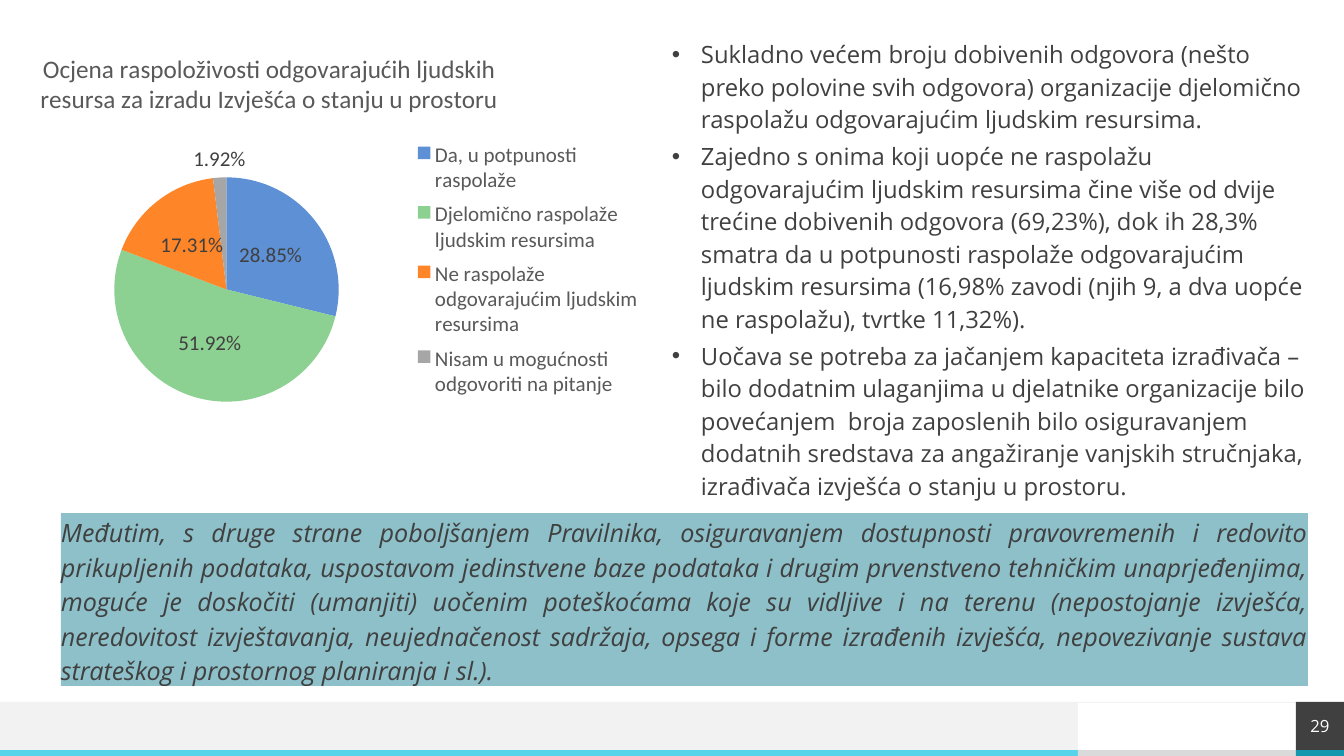
from lxml import etree
from pptx import Presentation
from pptx.chart.data import CategoryChartData
from pptx.dml.color import RGBColor
from pptx.enum.chart import XL_CHART_TYPE, XL_LEGEND_POSITION as LEGEND, XL_LABEL_POSITION as LABEL
from pptx.enum.shapes import MSO_CONNECTOR, MSO_SHAPE
from pptx.enum.text import MSO_ANCHOR, PP_ALIGN
from pptx.oxml import parse_xml
from pptx.oxml.ns import nsdecls, qn
from pptx.util import Pt

SCALE = 914400 / 100.8
DARK, GREY = "404040", "595959"

TITLE = ["Ocjena raspoloživosti odgovarajućih ljudskih", "resursa za izradu Izvješća o stanju u prostoru"]
ANSWERS = [
    ("Da, u potpunosti raspolaže", 0.2885, "5D90D5"),
    ("Djelomično raspolaže ljudskim resursima", 0.5192, "8CD092"),
    ("Ne raspolaže odgovarajućim ljudskim resursima", 0.1731, "FF8529"),
    ("Nisam u mogućnosti odgovoriti na pitanje", 0.0192, "A6A6A6"),
]
FINDINGS = [
    "Sukladno većem broju dobivenih odgovora (nešto preko polovine svih odgovora) organizacije "
    "djelomično raspolažu odgovarajućim ljudskim resursima.",
    "Zajedno s onima koji uopće ne raspolažu odgovarajućim ljudskim resursima čine više od dvije "
    "trećine dobivenih odgovora (69,23%), dok ih 28,3% smatra da u potpunosti raspolaže "
    "odgovarajućim ljudskim resursima (16,98% zavodi (njih 9, a dva uopće ne raspolažu), tvrtke 11,32%).",
    "Uočava se potreba za jačanjem kapaciteta izrađivača – bilo dodatnim ulaganjima u djelatnike "
    "organizacije bilo povećanjem  broja zaposlenih bilo osiguravanjem dodatnih sredstava za "
    "angažiranje vanjskih stručnjaka, izrađivača izvješća o stanju u prostoru.",
]
CONCLUSION = (
    "Međutim, s druge strane poboljšanjem Pravilnika, osiguravanjem dostupnosti pravovremenih i "
    "redovito prikupljenih podataka, uspostavom jedinstvene baze podataka i drugim prvenstveno "
    "tehničkim unaprjeđenjima, moguće je doskočiti (umanjiti) uočenim poteškoćama koje su vidljive "
    "i na terenu (nepostojanje izvješća, neredovitost izvještavanja, neujednačenost sadržaja, opsega "
    "i forme izrađenih izvješća, nepovezivanje sustava strateškog i prostornog planiranja i sl.)."
)


def px(length):
    return round(length * SCALE)


def rgb(value):
    return RGBColor.from_string(value)


def style(font, size, color, name="Open Sans"):
    font.size, font.name, font.bold = Pt(size), name, False
    font.color.rgb = rgb(color)


def rect(slide, x, y, w, h, color):
    box = slide.shapes.add_shape(MSO_SHAPE.RECTANGLE, px(x), px(y), px(w), px(h))
    box.shadow.inherit = False
    box.fill.solid()
    box.fill.fore_color.rgb = rgb(color)
    box.line.fill.background()
    return box


def clear_margins(frame):
    frame.margin_left = frame.margin_right = frame.margin_top = frame.margin_bottom = 0
    frame.word_wrap = True


def add_footer(slide, x, y, w, h, number):
    strip, page, wide = 6, 48, 1078
    band = h - strip
    page_x = x + w - page
    rect(slide, x, y, wide, band, "F2F2F2")
    for left, right, color in ((x, x + wide, "58D4EA"), (x + wide, page_x, "DADADA"),
                               (page_x, x + w, "1698AF")):
        rect(slide, left, y + band, right - left, strip, color)
    rule = slide.shapes.add_connector(MSO_CONNECTOR.STRAIGHT, px(x + w), px(y), px(x), px(y))
    rule.line.color.rgb = rgb("F2F2F2")
    rule.line.width = Pt(0.5)
    etree.SubElement(rule._element.spPr, qn("a:effectLst"))
    frame = rect(slide, page_x, y, page, band, DARK).text_frame
    clear_margins(frame)
    frame.vertical_anchor = MSO_ANCHOR.MIDDLE
    frame.text = number
    frame.paragraphs[0].alignment = PP_ALIGN.CENTER
    style(frame.paragraphs[0].runs[0].font, 12, "FFFFFF")


def add_findings(slide, x, y, w, h):
    frame = slide.shapes.add_textbox(px(x), px(y), px(w), px(h)).text_frame
    clear_margins(frame)
    frame.text = "\n".join(FINDINGS)
    for finding in frame.paragraphs:
        finding.line_spacing, finding.space_after = 1.14, Pt(3)
        props = finding._p.get_or_add_pPr()
        props.set("marL", str(px(29)))
        props.set("indent", str(-px(29)))
        etree.SubElement(props, qn("a:buFont")).set("typeface", "Arial")
        etree.SubElement(props, qn("a:buChar")).set("char", "•")
        style(finding.runs[0].font, 17, DARK)


def add_conclusion(slide, x, y, w, h):
    panel = rect(slide, x, y, w, h, "127C8F")
    color = panel._element.spPr.find(qn("a:solidFill"))[0]
    etree.SubElement(color, qn("a:alpha")).set("val", "48000")
    frame = panel.text_frame
    clear_margins(frame)
    frame.vertical_anchor = MSO_ANCHOR.MIDDLE
    frame.text = CONCLUSION
    text = frame.paragraphs[0]
    text.alignment, text.line_spacing, text.space_after = PP_ALIGN.JUSTIFY, 1.14, Pt(3)
    style(text.runs[0].font, 18, DARK)
    text.runs[0].font.italic = True


def place(element, inner=False, **fractions):
    """Give a chart part a manual layout in fractions of the chart."""
    for old in element.findall(qn("c:layout")):
        element.remove(old)
    target = '<c:layoutTarget val="inner"/>' if inner else ""
    modes = "".join(f'<c:{key}Mode val="edge"/>' for key in "xy")
    values = "".join(f'<c:{key} val="{value}"/>' for key, value in fractions.items())
    layout = parse_xml(f'<c:layout {nsdecls("c")}><c:manualLayout>{target}{modes}{values}'
                       "</c:manualLayout></c:layout>")
    before = [child for child in element if child.tag in (qn("c:tx"), qn("c:legendPos"))]
    element.insert(len(before), layout)


def add_answers_chart(slide, x, y, w, h):
    data = CategoryChartData(number_format="0.00%")
    data.categories = [answer for answer, _, _ in ANSWERS]
    data.add_series("Series 1", [share for _, share, _ in ANSWERS])
    chart = slide.shapes.add_chart(XL_CHART_TYPE.PIE, px(x), px(y), px(w), px(h), data).chart
    style(chart.font, 15, "000000", "Calibri")

    title = chart.chart_title
    title.text_frame.text = "\n".join(TITLE)
    for line in title.text_frame.paragraphs:
        line.alignment = PP_ALIGN.CENTER
        style(line.runs[0].font, 18, GREY, "Calibri")
    title.include_in_layout = False
    place(title._element, x=0.01, y=0.02)

    chart.has_legend = True
    chart.legend.position = LEGEND.RIGHT
    chart.legend.include_in_layout = False
    style(chart.legend.font, 15, GREY, "Calibri")
    place(chart.legend._element, x=0.59, y=0.23, w=0.37, h=0.68)
    place(chart._chartSpace.chart.plotArea, inner=True, x=0.13, y=0.34, w=0.35, h=0.56)

    pie = chart.plots[0]
    pie.vary_by_categories = True
    series = pie.series[0]
    for index, (_, _, color) in enumerate(ANSWERS):
        fill = series.points[index].format.fill
        fill.solid()
        fill.fore_color.rgb = rgb(color)
    labels = series.data_labels
    labels.show_value = True
    labels.number_format, labels.number_format_is_linked = "0.00%", False
    labels.position = LABEL.CENTER
    style(labels.font, 15, DARK, "Calibri")
    smallest = series.points[len(ANSWERS) - 1].data_label
    style(smallest.font, 15, DARK, "Calibri")
    smallest.position = LABEL.OUTSIDE_END


def main():
    deck = Presentation()
    deck.slide_width, deck.slide_height = px(1344), px(756)
    slide = deck.slides.add_slide(deck.slide_layouts[6])
    add_footer(slide, 0, 702, 1344, 54, "29")
    add_findings(slide, 672, 36, 635, 461)
    add_answers_chart(slide, 31, 41, 641, 401)
    add_conclusion(slide, 61, 513, 1247, 173)
    deck.save("out.pptx")


if __name__ == "__main__":
    main()
